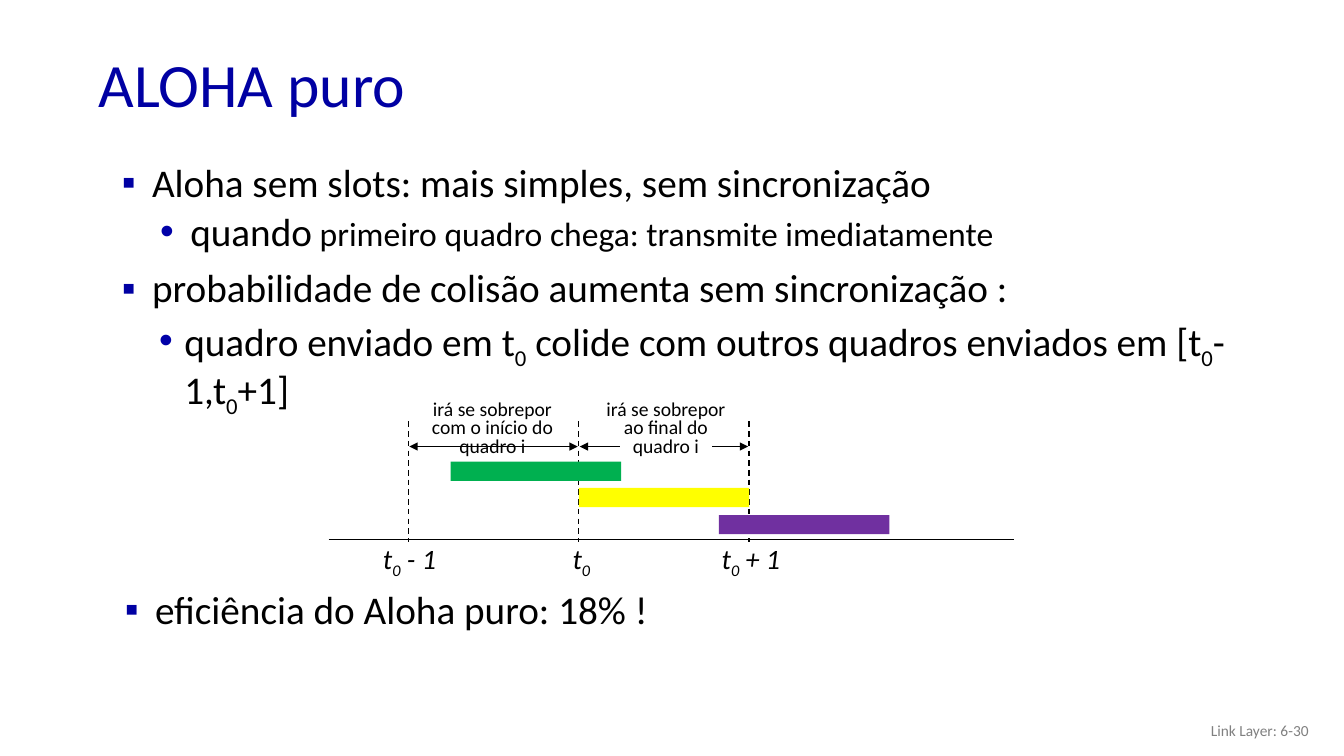
import dataclasses

import pptx
import pptx.dml.color
import pptx.enum.dml
import pptx.enum.shapes
import pptx.enum.text
import pptx.oxml
import pptx.oxml.ns
import pptx.util

Inches = pptx.util.Inches
Pt = pptx.util.Pt
RGB = pptx.dml.color.RGBColor.from_string
ALIGN = pptx.enum.text.PP_ALIGN
ANCHOR = pptx.enum.text.MSO_ANCHOR


@dataclasses.dataclass(frozen=True)
class Theme:
    font: str = "Calibri"
    title_color: str = "0000A3"
    bullet_color: str = "0000A3"
    sub_bullet_color: str = "0000A8"
    text: str = "000000"
    footer: str = "808080"
    background: str = "FFFFFF"
    first_frame: str = "00B050"
    middle_frame: str = "FFFF00"
    last_frame: str = "7030A0"
    title_size: int = 44
    body_size: int = 28
    detail_size: int = 24
    time_size: int = 20
    note_size: int = 14
    footer_size: int = 11


theme = Theme()


def add_text(box, paragraphs, color=theme.text, wrap=True, anchor=ANCHOR.TOP,
             align=ALIGN.LEFT, spacing=None, italic=False):
    """Fill a new text box; each paragraph is (bullet style, [(text, size)]).

    A bullet style is (character, color, level, margin, hanging indent, space before).
    An underscore lowers the character after it.
    """
    shape = slide.shapes.add_textbox(*(Inches(length) for length in box))
    frame = shape.text_frame
    frame.word_wrap = wrap
    frame.vertical_anchor = anchor
    if not wrap:
        frame.auto_size = pptx.enum.text.MSO_AUTO_SIZE.SHAPE_TO_FIT_TEXT
    for index, (bullet, parts) in enumerate(paragraphs):
        paragraph = frame.add_paragraph() if index else frame.paragraphs[0]
        paragraph.alignment = align
        if spacing:
            paragraph.line_spacing = spacing
        if bullet:
            character, bullet_color, level, margin, indent, space = bullet
            paragraph.level = level
            if index:
                paragraph.space_before = Pt(space)
            properties = paragraph._p.get_or_add_pPr()
            properties.set("marL", str(Inches(margin)))
            properties.set("indent", str(-Inches(indent)))
            namespace = pptx.oxml.ns.nsdecls("a")
            for element in (
                f'<a:buClr {namespace}><a:srgbClr val="{bullet_color}"/></a:buClr>',
                f'<a:buFont {namespace} typeface="Arial"/>',
                f'<a:buChar {namespace} char="{character}"/>',
            ):
                properties.append(pptx.oxml.parse_xml(element))
        for text, size in parts:
            plain, *lowered = text.split("_")
            pieces = [(plain, False)]
            for piece in lowered:
                pieces += [(piece[0], True), (piece[1:], False)]
            for piece, is_subscript in pieces:
                if not piece:
                    continue
                run = paragraph.add_run()
                run.text = piece
                run.font.name = theme.font
                run.font.size = Pt(size)
                run.font.color.rgb = RGB(color)
                if italic:
                    run.font.italic = True
                if is_subscript:
                    run._r.get_or_add_rPr().set("baseline", "-25000")


def add_line(start, end, dashed=False, arrows=False):
    connector = slide.shapes.add_connector(
        pptx.enum.shapes.MSO_CONNECTOR.STRAIGHT,
        *(Inches(length) for length in (*start, *end)))
    connector.line.color.rgb = RGB(theme.text)
    connector.line.width = Pt(1)
    if dashed:
        connector.line.dash_style = pptx.enum.dml.MSO_LINE.DASH
    if arrows:
        line = connector.line._get_or_add_ln()
        for tag in ("headEnd", "tailEnd"):
            line.append(pptx.oxml.parse_xml(
                f'<a:{tag} {pptx.oxml.ns.nsdecls("a")} type="triangle"/>'))
    connector._element.spPr.append(
        pptx.oxml.parse_xml(f'<a:effectLst {pptx.oxml.ns.nsdecls("a")}/>'))


presentation = pptx.Presentation()
presentation.slide_width = Inches(13.33)
presentation.slide_height = Inches(7.5)
slide = presentation.slides.add_slide(presentation.slide_layouts[6])
slide.background.fill.solid()
slide.background.fill.fore_color.rgb = RGB(theme.background)

# Title, footer and main points
add_text((0.88, 0.38, 11.5, 0.98), [(None, [("ALOHA puro", theme.title_size)])],
         color=theme.title_color, anchor=ANCHOR.MIDDLE, spacing=0.9)
add_text((10.08, 7.05, 3, 0.4), [(None, [("Link Layer: 6-30", theme.footer_size)])],
         color=theme.footer, anchor=ANCHOR.MIDDLE, align=ALIGN.RIGHT)

point = ("▪", theme.bullet_color, 0, 0.44, 0.3, 10)
subpoint = ("•", theme.sub_bullet_color, 1, 0.82, 0.3, 5)
tight_subpoint = ("•", theme.sub_bullet_color, 1, 0.76, 0.25, 5)
add_text((0.97, 1.57, 11.5, 2.53), [
    (point, [("Aloha sem slots: mais simples, sem sincronização", theme.body_size)]),
    (subpoint, [("quando", theme.body_size),
                (" primeiro quadro chega: transmite imediatamente", theme.detail_size)]),
    (point, [("probabilidade de colisão aumenta sem sincronização :", theme.body_size)]),
    (tight_subpoint, [("quadro enviado em t_0 colide com outros quadros enviados em "
                       "[t_0-1,t_0+1]", theme.body_size)]),
], spacing=0.9)

# Timeline: three instants, one frame time apart
frame_time = 1.69
t0 = 5.74
instants = [t0 - frame_time, t0, t0 + frame_time]

for left, right in zip(instants, instants[1:]):
    add_line((left + 0.01, 4.43), (right - 0.01, 4.43), arrows=True)

bars = [
    (6.15, 4.39, 0.91, 0.06, theme.background),
    (4.47, 4.58, frame_time, 0.19, theme.first_frame),
    (t0, 4.84, frame_time, 0.19, theme.middle_frame),
    (7.13, 5.11, frame_time, 0.19, theme.last_frame),
]
add_line((3.26, 5.35), (10.06, 5.35))
for instant in instants:
    add_line((instant, 4.18), (instant, 5.38), dashed=True)
for *box, color in bars:
    bar = slide.shapes.add_shape(pptx.enum.shapes.MSO_SHAPE.RECTANGLE,
                                 *(Inches(length) for length in box))
    bar.shadow.inherit = False
    bar.fill.solid()
    bar.fill.fore_color.rgb = RGB(color)
    bar.line.fill.background()

for left, width, label in ((3.7, 0.75, "t_0 - 1"), (5.58, 0.39, "t_0"),
                           (7.06, 0.8, "t_0 + 1")):
    add_text((left, 5.32, width, 0.44), [(None, [(label, theme.time_size)])],
             wrap=False, italic=True)

for left, width, overlap in ((4.16, 1.45, "com o início do"), (5.91, 1.39, "ao final do")):
    add_text((left, 3.93, width, 0.67),
             [(None, [(text, theme.note_size)])
              for text in ("irá se sobrepor", overlap, "quadro i")],
             wrap=False, align=ALIGN.CENTER, spacing=0.8)

# Conclusion
add_text((1, 5.81, 11.5, 0.68),
         [(point, [("eficiência do Aloha puro: 18% !", theme.body_size)])], spacing=0.9)

presentation.save("out.pptx")
